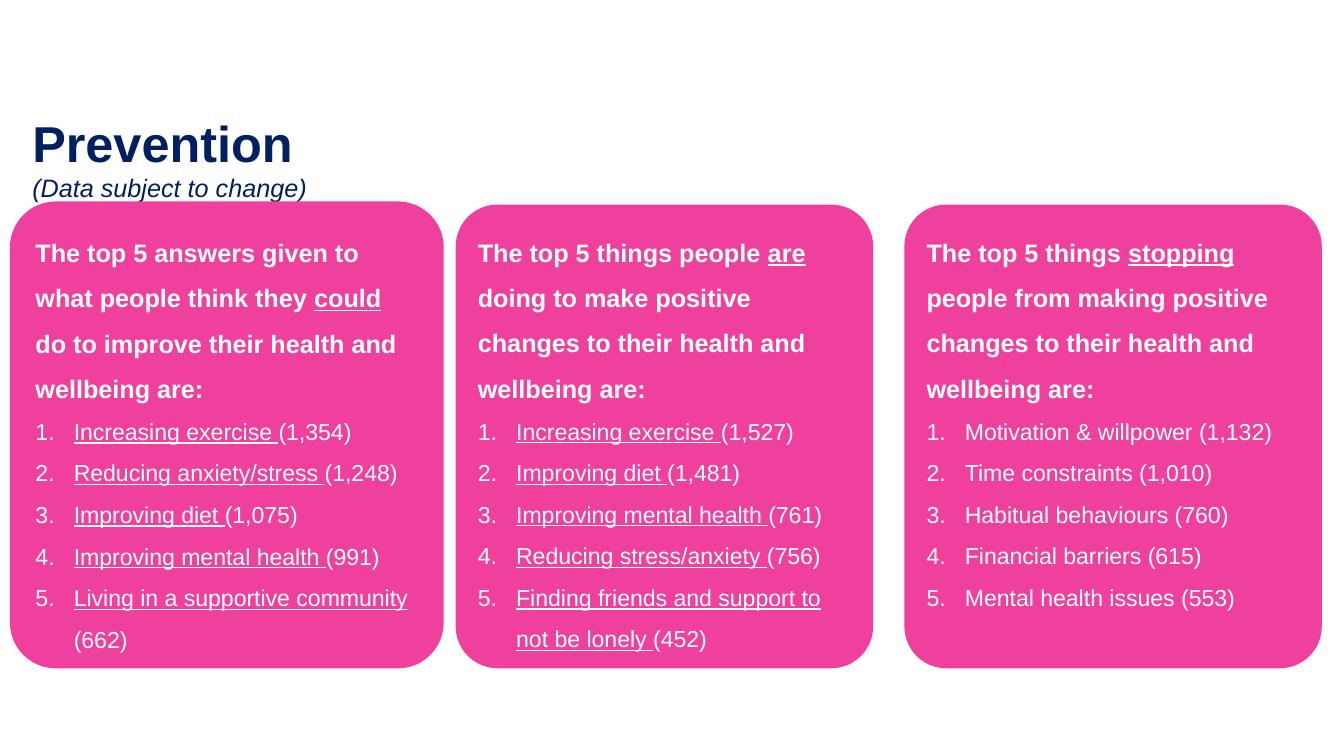
from lxml import etree
from pptx import Presentation
from pptx import util as u
from pptx.dml.color import RGBColor
from pptx.enum import shapes, text
from pptx.oxml.ns import qn

NAVY = RGBColor(0x00, 0x20, 0x60)
PINK = RGBColor(0xF0, 0x40, 0x9D)
WHITE = RGBColor(0xFF, 0xFF, 0xFF)
FONT = "Arial"

TITLE = "Prevention"
NOTE = "(Data subject to change)"
PANELS = [
    {
        "box": (0.13, 4.24, 4.57), "edge": 4.5, "link": True,
        "head": ("The top 5 answers given to what people think they ", "could ",
                 "do to improve their health and wellbeing are:"),
        "list": [("Increasing exercise ", "(1,354)"),
                 ("Reducing anxiety/stress ", "(1,248)"),
                 ("Improving diet ", "(1,075)"),
                 ("Improving mental health ", "(991)"),
                 ("Living in a supportive community ", "(662)")],
    },
    {
        "box": (4.52, 4.14, 4.6), "edge": 0, "link": True,
        "head": ("The top 5 things people ", "are",
                 " doing to make positive changes to their health and wellbeing are:"),
        "list": [("Increasing exercise ", "(1,527)"),
                 ("Improving diet ", "(1,481)"),
                 ("Improving mental health ", "(761)"),
                 ("Reducing stress/anxiety ", "(756)"),
                 ("Finding friends and support to not be lonely ", "(452)")],
    },
    {
        "box": (8.97, 4.14, 4.6), "edge": 0, "link": False,
        "head": ("The top 5 things ", "stopping ",
                 "people from making positive changes to their health and wellbeing are:"),
        "list": [("Motivation & willpower ", "(1,132)"),
                 ("Time constraints ", "(1,010)"),
                 ("Habitual behaviours ", "(760)"),
                 ("Financial barriers ", "(615)"),
                 ("Mental health issues ", "(553)")],
    },
]
TOP = 2.03
INDENT = u.Inches(0.38)


def add_run(para, words, size, color, bold=False, line=False, slant=False):
    run = para.add_run()
    run.text = words
    font = run.font
    font.name, font.size, font.color.rgb = FONT, u.Pt(size), color
    font.bold, font.underline, font.italic = bold, line, slant


def set_para(para, space):
    para.alignment = text.PP_ALIGN.LEFT
    para.line_spacing = space
    para.space_before = para.space_after = u.Pt(0)


def number(para):
    props = para._p.get_or_add_pPr()
    props.set("marL", str(INDENT))
    props.set("indent", str(-INDENT))
    etree.SubElement(props, qn("a:buFont"), typeface=FONT)
    etree.SubElement(props, qn("a:buAutoNum"), type="arabicPeriod")


def add_title(slide):
    title = slide.shapes.title
    title.left, title.top = u.Inches(0.22), u.Inches(1.01)
    title.width, title.height = u.Inches(12.02), u.Inches(1.65)
    frame = title.text_frame
    frame.auto_size = text.MSO_AUTO_SIZE.NONE
    frame.vertical_anchor = text.MSO_ANCHOR.TOP
    frame.margin_top = u.Inches(0.1)
    first = frame.paragraphs[0]
    add_run(first, TITLE, 36, NAVY, bold=True)
    second = frame.add_paragraph()
    add_run(second, NOTE, 18, NAVY, slant=True)
    for para in (first, second):
        set_para(para, 1.0)


def add_panel(slide, panel):
    left, wide, high = map(u.Inches, panel["box"])
    card = slide.shapes.add_shape(
        shapes.MSO_SHAPE.ROUNDED_RECTANGLE, left, u.Inches(TOP), wide, high)
    card.adjustments[0] = 0.1
    card.shadow.inherit = False
    card.fill.solid()
    card.fill.fore_color.rgb = PINK
    if panel["edge"]:
        card.line.color.rgb = PINK
        card.line.width = u.Pt(panel["edge"])
    else:
        card.line.fill.background()
    frame = card.text_frame
    frame.word_wrap = True
    frame.vertical_anchor = text.MSO_ANCHOR.TOP
    head = frame.paragraphs[0]
    set_para(head, 1.5)
    for spot, words in enumerate(panel["head"]):
        add_run(head, words, 18, WHITE, bold=True, line=spot == 1)
    for label, count in panel["list"]:
        para = frame.add_paragraph()
        set_para(para, 1.5)
        number(para)
        add_run(para, label, 16.5, WHITE, line=panel["link"])
        add_run(para, count, 16.5, WHITE)


def main():
    deck = Presentation()
    deck.slide_width, deck.slide_height = u.Inches(13.33), u.Inches(7.5)
    slide = deck.slides.add_slide(deck.slide_layouts[5])
    add_title(slide)
    for panel in PANELS:
        add_panel(slide, panel)
    deck.save("out.pptx")


if __name__ == "__main__":
    main()
